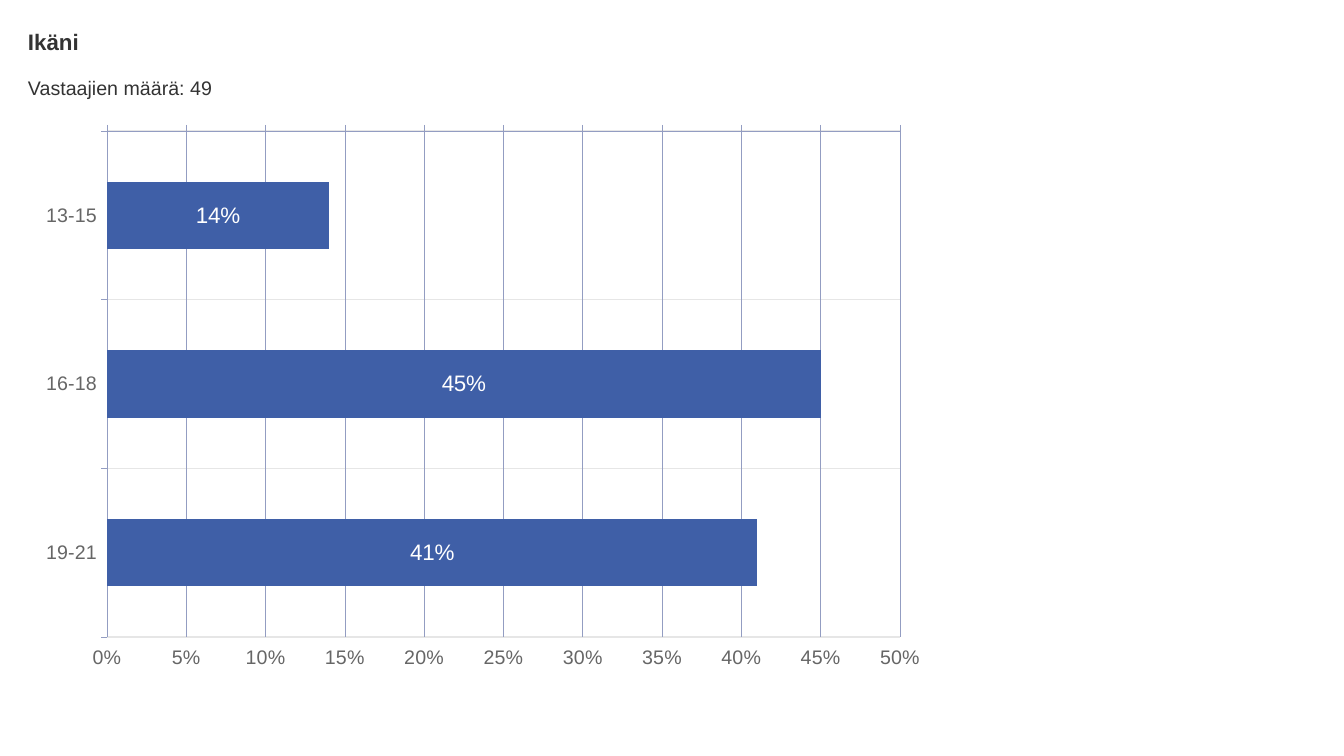
from dataclasses import dataclass
from typing import Any

from lxml.etree import SubElement
from pptx import Presentation
from pptx.chart.data import CategoryChartData
from pptx.dml.color import RGBColor
from pptx.enum.chart import XL_CHART_TYPE as ChartType
from pptx.enum.chart import XL_LABEL_POSITION as LabelPosition
from pptx.enum.chart import XL_TICK_LABEL_POSITION as TickLabels
from pptx.enum.chart import XL_TICK_MARK as TickMark
from pptx.enum.text import MSO_AUTO_SIZE as AutoSize
from pptx.oxml.ns import qn
from pptx.util import Emu, Pt


@dataclass(frozen=True)
class Theme:
    text: str = "333333"
    axis_text: str = "666666"
    bar: str = "3F5FA7"
    bar_text: str = "FFFFFF"
    axis_line: str = "939DC2"
    row_line: str = "E6E6E6"
    font: str = "Arial"
    chart_font: str = "Roboto"
    large: int = 16
    normal: int = 14
    thin: float = 0.5
    thick: float = 1


@dataclass(frozen=True)
class Box:
    left: int
    top: int
    width: int
    height: int

    def emu(self) -> tuple[Emu, Emu, Emu, Emu]:
        return px(self.left), px(self.top), px(self.width), px(self.height)


@dataclass(frozen=True)
class Heading:
    text: str
    box: Box
    size: int
    bold: bool


THEME = Theme()
EMU_PER_PX = 914400 / 100.8
SLIDE = Box(0, 0, 1344, 756)
CHART = Box(28, 120, 910, 560)
PLOT = Box(107, 131, 793, 506)
HEADINGS = [
    Heading("Ikäni", Box(28, 28, 1288, 27), THEME.large, True),
    Heading("Vastaajien määrä: 49", Box(28, 76, 1288, 23), THEME.normal, False),
]
AGE_SHARES = {"13-15": 0.14, "16-18": 0.45, "19-21": 0.41}


def px(length: int) -> Emu:
    return Emu(round(length * EMU_PER_PX))


def apply(target: Any, values: dict[str, Any]) -> None:
    for name, value in values.items():
        setattr(target, name, value)


def style_font(font: Any, size: int, color: str, name: str = THEME.font, bold: bool = False) -> None:
    apply(font, {"name": name, "size": Pt(size), "bold": bold})
    font.color.rgb = RGBColor.from_string(color)


def style_line(line: Any, color: str, width: float) -> None:
    line.color.rgb = RGBColor.from_string(color)
    line.width = Pt(width)


def add_heading(slide: Any, heading: Heading) -> None:
    frame = slide.shapes.add_textbox(*heading.box.emu()).text_frame
    apply(frame, {
        "margin_left": 0, "margin_top": 0, "margin_right": 0, "margin_bottom": 0,
        "word_wrap": True, "auto_size": AutoSize.SHAPE_TO_FIT_TEXT,
    })
    run = frame.paragraphs[0].add_run()
    run.text = heading.text
    style_font(run.font, heading.size, THEME.text, bold=heading.bold)


def style_axis(axis: Any, values: dict[str, Any], grid_color: str, grid_width: float) -> None:
    apply(axis, {
        "has_major_gridlines": True,
        "major_tick_mark": TickMark.OUTSIDE,
        "minor_tick_mark": TickMark.NONE,
        **values,
    })
    style_font(axis.tick_labels.font, THEME.normal, THEME.axis_text)
    style_line(axis.format.line, THEME.axis_line, THEME.thin)
    style_line(axis.major_gridlines.format.line, grid_color, grid_width)


def place_plot(chart: Any, plot: Box, frame: Box) -> None:
    area = chart.element.find(".//" + qn("c:plotArea"))
    for old_layout in area.findall(qn("c:layout")):
        area.remove(old_layout)
    layout = SubElement(area, qn("c:layout"))
    area.insert(0, layout)
    manual = SubElement(layout, qn("c:manualLayout"))
    settings = {
        "layoutTarget": "inner",
        "xMode": "edge",
        "yMode": "edge",
        "x": (plot.left - frame.left) / frame.width,
        "y": (plot.top - frame.top) / frame.height,
        "w": plot.width / frame.width,
        "h": plot.height / frame.height,
    }
    for tag, value in settings.items():
        SubElement(manual, qn(f"c:{tag}")).set("val", str(value))


def add_age_chart(slide: Any) -> None:
    data = CategoryChartData(number_format="0%")
    data.categories = list(AGE_SHARES)
    data.add_series("Series 1", list(AGE_SHARES.values()))
    chart = slide.shapes.add_chart(ChartType.BAR_CLUSTERED, *CHART.emu(), data).chart
    apply(chart, {"has_legend": False, "has_title": False})
    style_font(chart.font, THEME.normal, THEME.bar, THEME.chart_font)

    style_axis(chart.category_axis, {
        "reverse_order": True, "tick_label_position": TickLabels.LOW,
    }, THEME.row_line, THEME.thick)
    style_axis(chart.value_axis, {
        "minimum_scale": 0, "maximum_scale": 0.5, "major_unit": 0.05,
        "tick_label_position": TickLabels.HIGH,
    }, THEME.axis_line, THEME.thin)
    percent = {"number_format": "0%", "number_format_is_linked": False}
    apply(chart.value_axis.tick_labels, percent)

    plot = chart.plots[0]
    apply(plot, {"gap_width": 150, "vary_by_categories": False, "has_data_labels": True})
    apply(plot.data_labels, {**percent, "show_value": True, "position": LabelPosition.CENTER})
    style_font(plot.data_labels.font, THEME.large, THEME.bar_text)
    fill = plot.series[0].format.fill
    fill.solid()
    fill.fore_color.rgb = RGBColor.from_string(THEME.bar)
    place_plot(chart, PLOT, CHART)


def main() -> None:
    presentation = Presentation()
    apply(presentation, {"slide_width": px(SLIDE.width), "slide_height": px(SLIDE.height)})
    slide = presentation.slides.add_slide(presentation.slide_layouts[6])
    for heading in HEADINGS:
        add_heading(slide, heading)
    add_age_chart(slide)
    presentation.save("out.pptx")


if __name__ == "__main__":
    main()
